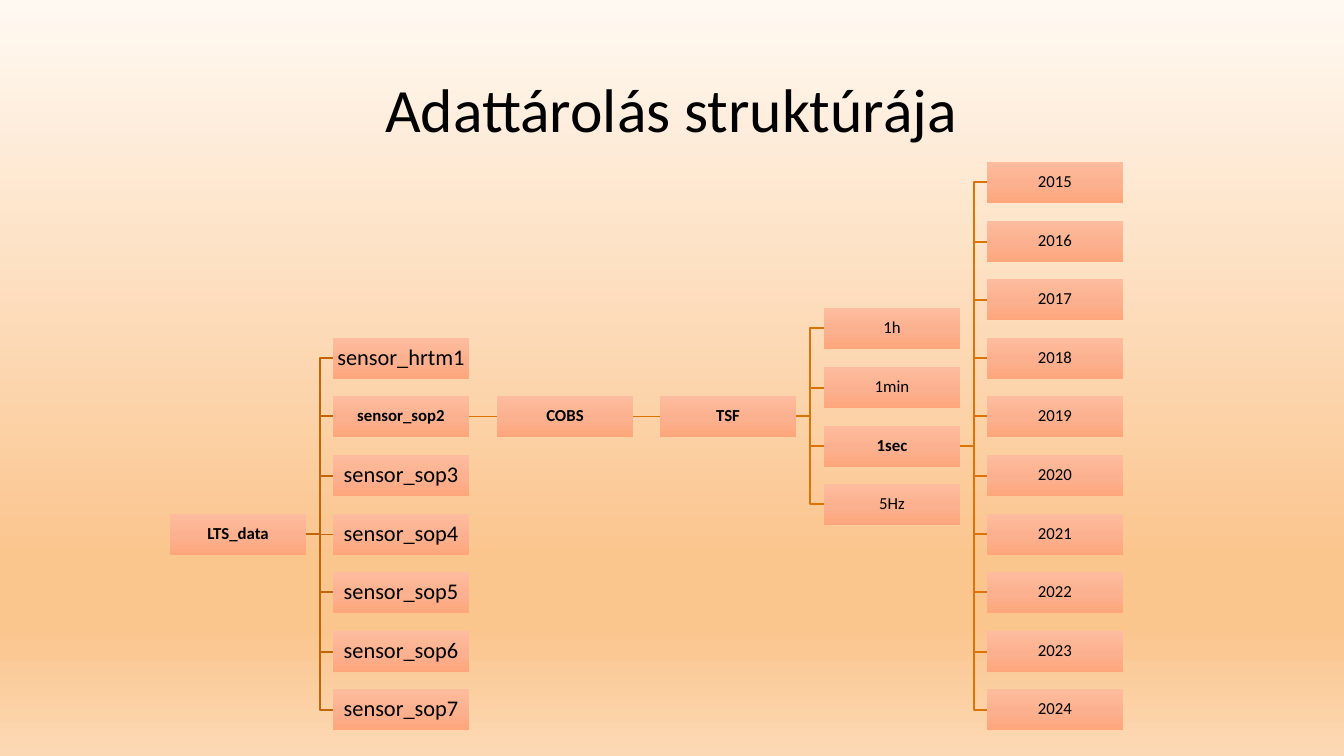
from lxml import etree
from pptx import Presentation
from pptx import util as u
from pptx.dml.color import RGBColor
from pptx.enum import shapes, text
from pptx.oxml.ns import qn

PX = 914400 / 100.8
COLORS = {
    "text": "000000", "root_link": "C06607", "link": "DA7308",
    "page_top": "FFF9F2", "page_deep": "FBC58E", "page_bottom": "FCD9B4",
    "box_top": "FDBC9E", "box_middle": "FBB190", "box_bottom": "FFA67C",
}
PAGE_STOPS = [(0, "page_top"), (74, "page_deep"), (83, "page_deep"), (100, "page_bottom")]
BOX_STOPS = [(0, "box_top"), (50, "box_middle"), (100, "box_bottom")]

COLUMN_LEFTS = [170, 333, 497, 660, 824, 987]
BOX_WIDTH, BOX_HEIGHT = 136, 41
FIRST_TOP, ROW_STEP = 162, 58.6

SENSORS = ["sensor_hrtm1", "sensor_sop2"] + [f"sensor_sop{n}" for n in range(3, 8)]
LEVELS = [
    (["LTS_data"], 6),
    (SENSORS, 3),
    (["COBS"], 4),
    (["TSF"], 4),
    (["1h", "1min", "1sec", "5Hz"], 2.5),
    ([str(year) for year in range(2015, 2025)], 0),
]
OPEN_FOLDERS = ["LTS_data", "sensor_sop2", "COBS", "TSF", "1sec"]


def paint_gradient(fill, element, stops):
    fill.gradient()
    fill.gradient_angle = 270
    stop_list = next(element.iter(qn("a:gsLst")))
    for stop in list(stop_list):
        stop_list.remove(stop)
    for percent, color in stops:
        stop = etree.SubElement(stop_list, qn("a:gs"), pos=str(percent * 1000))
        etree.SubElement(stop, qn("a:srgbClr"), val=COLORS[color])


def write_text(frame, words, size, bold):
    frame.text = words
    frame.word_wrap = True
    frame.vertical_anchor = text.MSO_ANCHOR.MIDDLE
    para = frame.paragraphs[0]
    para.alignment = text.PP_ALIGN.CENTER
    para.line_spacing = 0.9
    font = para.runs[0].font
    font.name, font.size, font.bold = "Calibri", u.Pt(size), bold
    font.color.rgb = RGBColor.from_string(COLORS["text"])


deck = Presentation()
deck.slide_width, deck.slide_height = round(1344 * PX), round(756 * PX)
page = deck.slides.add_slide(deck.slide_layouts[5])
paint_gradient(page.background.fill, page.element, PAGE_STOPS)

title = page.shapes.title
title.left, title.top, title.width, title.height = [round(n * PX) for n in (92, 40, 1159, 146)]
write_text(title.text_frame, "Adattárolás struktúrája", 44, False)

folders = []
for left, (names, first_row) in zip(COLUMN_LEFTS, LEVELS):
    tops = [round(FIRST_TOP + (first_row + i) * ROW_STEP) for i in range(len(names))]
    folders.append([(name, left, top) for name, top in zip(names, tops)])

for level, (parents, children) in enumerate(zip(folders, folders[1:])):
    parent_left, parent_top = next((x, y) for name, x, y in parents if name in OPEN_FOLDERS)
    start_x, start_y = parent_left + BOX_WIDTH, parent_top + BOX_HEIGHT / 2
    for name, end_x, child_top in children:
        end_y = child_top + BOX_HEIGHT / 2
        if end_y == start_y:
            ends = [round(n * PX) for n in (start_x, start_y, end_x, end_y)]
            link = page.shapes.add_connector(shapes.MSO_CONNECTOR.STRAIGHT, *ends)
            etree.SubElement(link.element.spPr, qn("a:effectLst"))
        else:
            middle_x = (start_x + end_x) / 2
            outline = page.shapes.build_freeform(start_x, start_y, scale=PX)
            outline.add_line_segments(
                [(middle_x, start_y), (middle_x, end_y), (end_x, end_y)], close=False)
            link = outline.convert_to_shape()
            link.fill.background()
            link.shadow.inherit = False
        link.line.color.rgb = RGBColor.from_string(COLORS["link" if level else "root_link"])
        link.line.width = u.Pt(1)

for level in folders:
    for name, left, top in level:
        place = [round(n * PX) for n in (left, top, BOX_WIDTH, BOX_HEIGHT)]
        box = page.shapes.add_shape(shapes.MSO_SHAPE.RECTANGLE, *place)
        box.shadow.inherit = False
        box.line.fill.background()
        paint_gradient(box.fill, box.element, BOX_STOPS)
        frame = box.text_frame
        frame.margin_left = frame.margin_right = round(PX)
        frame.margin_top = frame.margin_bottom = round(PX)
        is_open = name in OPEN_FOLDERS
        write_text(frame, name, 16 if name in SENSORS and not is_open else 12, is_open)

deck.save("out.pptx")
